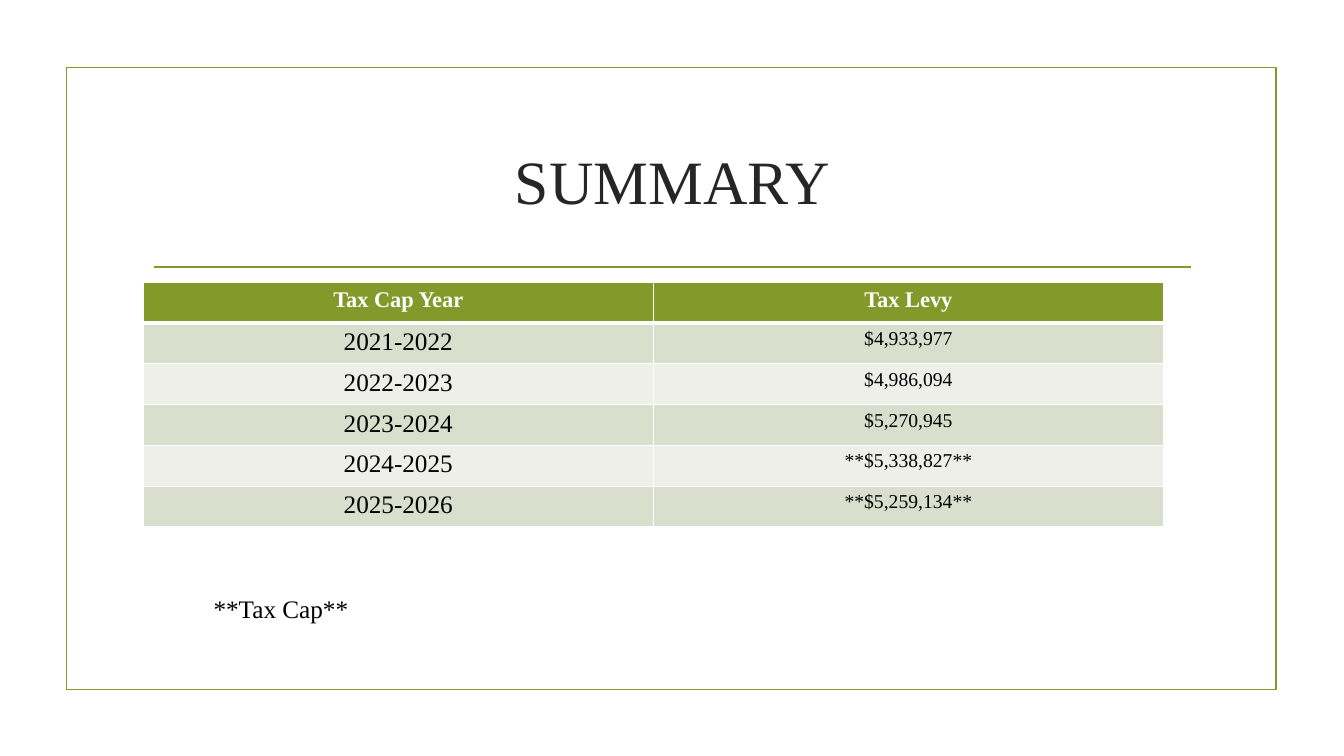
from lxml.etree import SubElement
from pptx import Presentation
from pptx.dml.color import RGBColor
from pptx.enum.shapes import MSO_CONNECTOR, MSO_SHAPE
from pptx.enum.text import MSO_ANCHOR, MSO_AUTO_SIZE, PP_ALIGN
from pptx.oxml.ns import qn
from pptx.util import Inches, Pt

GREEN = "83992A"
WHITE = "FFFFFF"
BLACK = "000000"
BANDS = ["D9DECD", "EDEFE8"]
TAX_LEVIES = [
    ("Tax Cap Year", "Tax Levy"),
    ("2021-2022", "$4,933,977"),
    ("2022-2023", "$4,986,094"),
    ("2023-2024", "$5,270,945"),
    ("2024-2025", "**$5,338,827**"),
    ("2025-2026", "**$5,259,134**"),
]


def color(value):
    return RGBColor.from_string(value)


class SummarySlide:
    font_name = "Times New Roman"
    line_width = 1.25

    def __init__(self, presentation):
        self.slide = presentation.slides.add_slide(presentation.slide_layouts[6])
        self.shapes = self.slide.shapes

    def style_line(self, line):
        line.color.rgb = color(GREEN)
        line.width = Pt(self.line_width)

    def frame(self, left, top, width, height):
        shape = self.shapes.add_shape(
            MSO_SHAPE.RECTANGLE, Inches(left), Inches(top), Inches(width), Inches(height))
        shape.shadow.inherit = False
        shape.fill.background()
        self.style_line(shape.line)

    def rule(self, left, right, top):
        connector = self.shapes.add_connector(
            MSO_CONNECTOR.STRAIGHT, Inches(left), Inches(top), Inches(right), Inches(top))
        self.style_line(connector.line)
        SubElement(connector._element.spPr, qn("a:effectLst"))

    def fill_text(self, text_frame, text, size, text_color, bold=False, alignment=PP_ALIGN.CENTER):
        paragraph = text_frame.paragraphs[0]
        paragraph.alignment = alignment
        run = paragraph.add_run()
        run.text = text
        formats = {"name": self.font_name, "size": Pt(size), "bold": bold}
        for attribute, value in formats.items():
            setattr(run.font, attribute, value)
        run.font.color.rgb = color(text_color)

    def text(self, left, top, width, height, text, size, text_color, alignment, **frame_formats):
        box = self.shapes.add_textbox(Inches(left), Inches(top), Inches(width), Inches(height))
        for attribute, value in {"word_wrap": True, **frame_formats}.items():
            setattr(box.text_frame, attribute, value)
        self.fill_text(box.text_frame, text, size, text_color, alignment=alignment)

    def cell_borders(self, cell, widths):
        properties = cell._tc.get_or_add_tcPr()
        for side, width in widths.items():
            border = SubElement(properties, qn(f"a:ln{side}"), w=str(Pt(width)))
            fill = SubElement(border, qn("a:solidFill"))
            SubElement(fill, qn("a:srgbClr"), val=WHITE)

    def table(self, left, top, width, height, rows):
        table = self.shapes.add_table(
            len(rows), len(rows[0]), Inches(left), Inches(top), Inches(width), Inches(height)).table
        for row_index, row in enumerate(rows):
            header = row_index == 0
            fill = GREEN if header else BANDS[(row_index - 1) % 2]
            sizes = (16, 16) if header else (18, 14)
            widths = {"L": 1, "R": 1, "T": 3 if row_index == 1 else 1, "B": 3 if header else 1}
            for column_index, (text, size) in enumerate(zip(row, sizes)):
                cell = table.cell(row_index, column_index)
                self.cell_borders(cell, widths)
                cell.fill.solid()
                cell.fill.fore_color.rgb = color(fill)
                self.fill_text(cell.text_frame, text, size, WHITE if header else BLACK, header)


def main():
    presentation = Presentation()
    presentation.slide_width = Inches(13.33)
    presentation.slide_height = Inches(7.5)
    summary = SummarySlide(presentation)
    summary.frame(0.66, 0.67, 12, 6.17)
    summary.rule(1.53, 11.81, 2.65)
    summary.text(1.42, 1.07, 10.5, 1.43, "SUMMARY", 44, "262626", PP_ALIGN.CENTER,
                 vertical_anchor=MSO_ANCHOR.MIDDLE)
    summary.table(1.42, 2.8, 10.12, 2.43, TAX_LEVIES)
    summary.text(2.02, 5.84, 3.27, 0.4, "**Tax Cap**", 18, BLACK, PP_ALIGN.LEFT,
                 auto_size=MSO_AUTO_SIZE.SHAPE_TO_FIT_TEXT)
    presentation.save("out.pptx")


if __name__ == "__main__":
    main()
